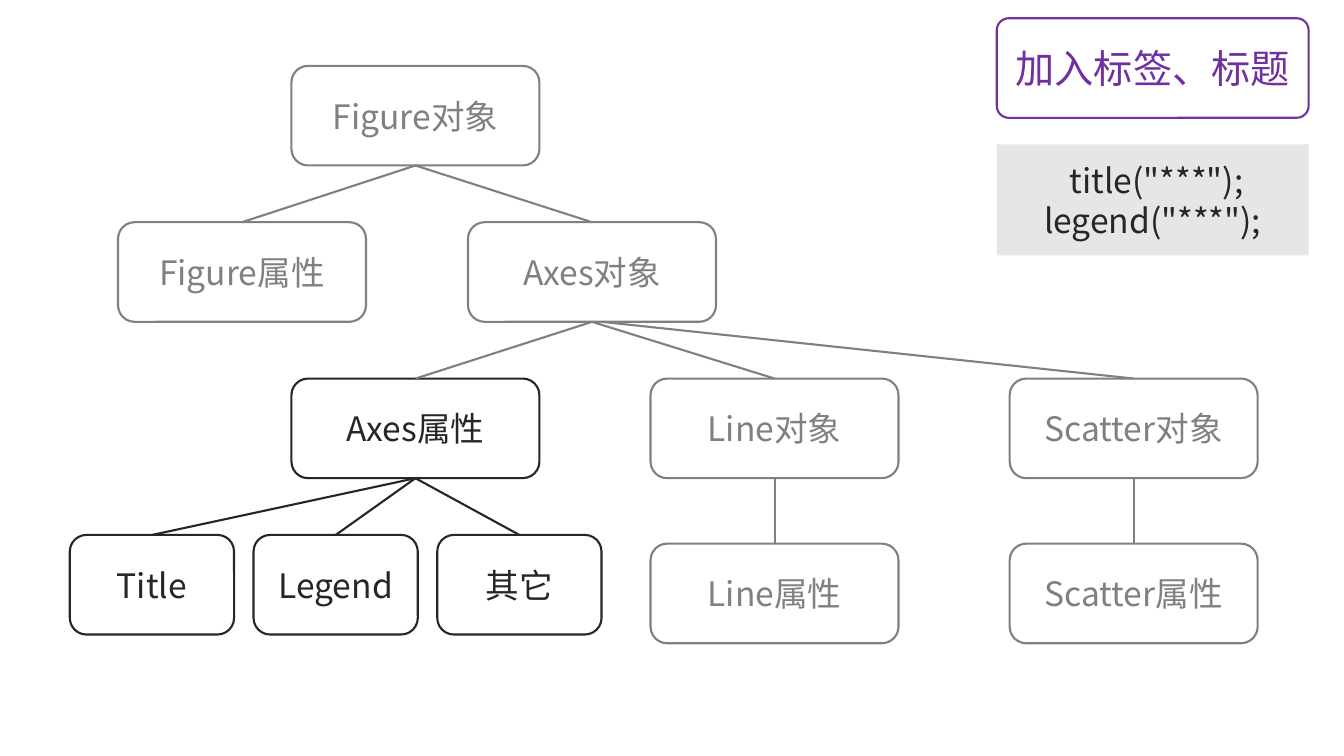
"""Build a slide with the object tree of a figure and the calls that add labels."""
from lxml.etree import SubElement
from pptx import Presentation
from pptx.dml.color import RGBColor as Rgb
from pptx.enum.shapes import MSO_CONNECTOR as Connector, MSO_SHAPE as Shape
from pptx.enum.text import MSO_ANCHOR as Anchor, PP_ALIGN as Align
from pptx.oxml.ns import qn
from pptx.util import Cm, Pt

FONT = "Noto Sans CJK SC"
COLOURS = {"muted": "808080", "dark": "262626", "accent": "7030A0",
           "white": "FFFFFF", "panel": "E7E6E6"}

FIRST_TOP, ROW_STEP, LEAF_TOP = 1.66, 3.94, 13.7
ROWS = [FIRST_TOP + ROW_STEP * row for row in range(4)]
BOX_HEIGHT, WIDE, NARROW = 2.51, 6.25, 4.14
PART_CENTRE, PART_STEP = 3.83, 4.63
PANEL_LEFT, PANEL_WIDTH = 25.12, 7.86

# name: (centre, top, width, colour)
NODES = {
    "Figure对象": (10.47, ROWS[0], WIDE, "muted"),
    "Figure属性": (6.1, ROWS[1], WIDE, "muted"),
    "Axes对象": (14.92, ROWS[1], WIDE, "muted"),
    "Axes属性": (10.47, ROWS[2], WIDE, "dark"),
    "Line对象": (19.52, ROWS[2], WIDE, "muted"),
    "Scatter对象": (28.57, ROWS[2], WIDE, "muted"),
    "Line属性": (19.52, LEAF_TOP, WIDE, "muted"),
    "Scatter属性": (28.57, LEAF_TOP, WIDE, "muted"),
}
PARTS = ["Title", "Legend", "其它"]
for index, part in enumerate(PARTS):
    NODES[part] = (PART_CENTRE + PART_STEP * index, ROWS[3], NARROW, "dark")

# (parent, child, shift of the start, colour)
LINKS = [
    ("Figure对象", "Figure属性", 0, "muted"),
    ("Figure对象", "Axes对象", 0, "muted"),
    ("Axes对象", "Axes属性", 0, "muted"),
    ("Axes对象", "Line对象", 0, "muted"),
    ("Axes对象", "Scatter对象", 0.25, "muted"),
    ("Line对象", "Line属性", 0, "muted"),
    ("Scatter对象", "Scatter属性", 0, "muted"),
] + [("Axes属性", part, 0, "dark") for part in PARTS]

HEADING = "加入标签、标题"
CODE = [' title("***");', 'legend("***");']


def colour(name):
    """Return the named colour."""
    return Rgb.from_string(COLOURS[name])


def write(shape, lines, size=24, ink="dark"):
    """Write centred lines of text into a shape."""
    frame = shape.text_frame
    frame.word_wrap = True
    frame.vertical_anchor = Anchor.MIDDLE
    for number, text in enumerate(lines):
        paragraph = frame.add_paragraph() if number else frame.paragraphs[0]
        paragraph.alignment = Align.CENTER
        paragraph.line_spacing = 1.0
        run = paragraph.add_run()
        run.text = text
        run.font.size = Pt(size)
        run.font.name = FONT
        run.font.color.rgb = colour(ink)
        SubElement(run.font._element, qn("a:ea")).set("typeface", FONT)


def add_box(slide, left, top, width, height, kind=Shape.ROUNDED_RECTANGLE,
            fill="white", line=None):
    """Add a filled box with an optional outline."""
    shape = slide.shapes.add_shape(kind, Cm(left), Cm(top), Cm(width), Cm(height))
    shape.shadow.inherit = False
    shape.fill.solid()
    shape.fill.fore_color.rgb = colour(fill)
    if line:
        shape.line.color.rgb = colour(line)
        shape.line.width = Pt(1.5)
    else:
        shape.line.fill.background()
    return shape


def add_link(slide, parent, child, shift, ink):
    """Join the bottom of a parent to the top of its child."""
    start, end = NODES[parent], NODES[child]
    link = slide.shapes.add_connector(
        Connector.STRAIGHT, Cm(start[0] + shift), Cm(start[1] + BOX_HEIGHT),
        Cm(end[0]), Cm(end[1]))
    link.line.color.rgb = colour(ink)
    link.line.width = Pt(1.5)
    SubElement(link._element.spPr, qn("a:effectLst"))


def main():
    """Build and save the presentation."""
    presentation = Presentation()
    presentation.slide_width, presentation.slide_height = Cm(33.87), Cm(19.05)
    slide = presentation.slides.add_slide(presentation.slide_layouts[6])
    for name, (centre, top, width, ink) in NODES.items():
        box = add_box(slide, centre - width / 2, top, width, BOX_HEIGHT, line=ink)
        write(box, [name], ink=ink)
    for link in LINKS:
        add_link(slide, *link)
    heading = add_box(slide, PANEL_LEFT, 0.46, PANEL_WIDTH, BOX_HEIGHT, line="accent")
    heading.adjustments[0] = 0.12
    write(heading, [HEADING], size=28, ink="accent")
    code = add_box(slide, PANEL_LEFT, 3.64, PANEL_WIDTH, 2.8,
                   kind=Shape.RECTANGLE, fill="panel")
    write(code, CODE)
    presentation.save("out.pptx")


if __name__ == "__main__":
    main()
